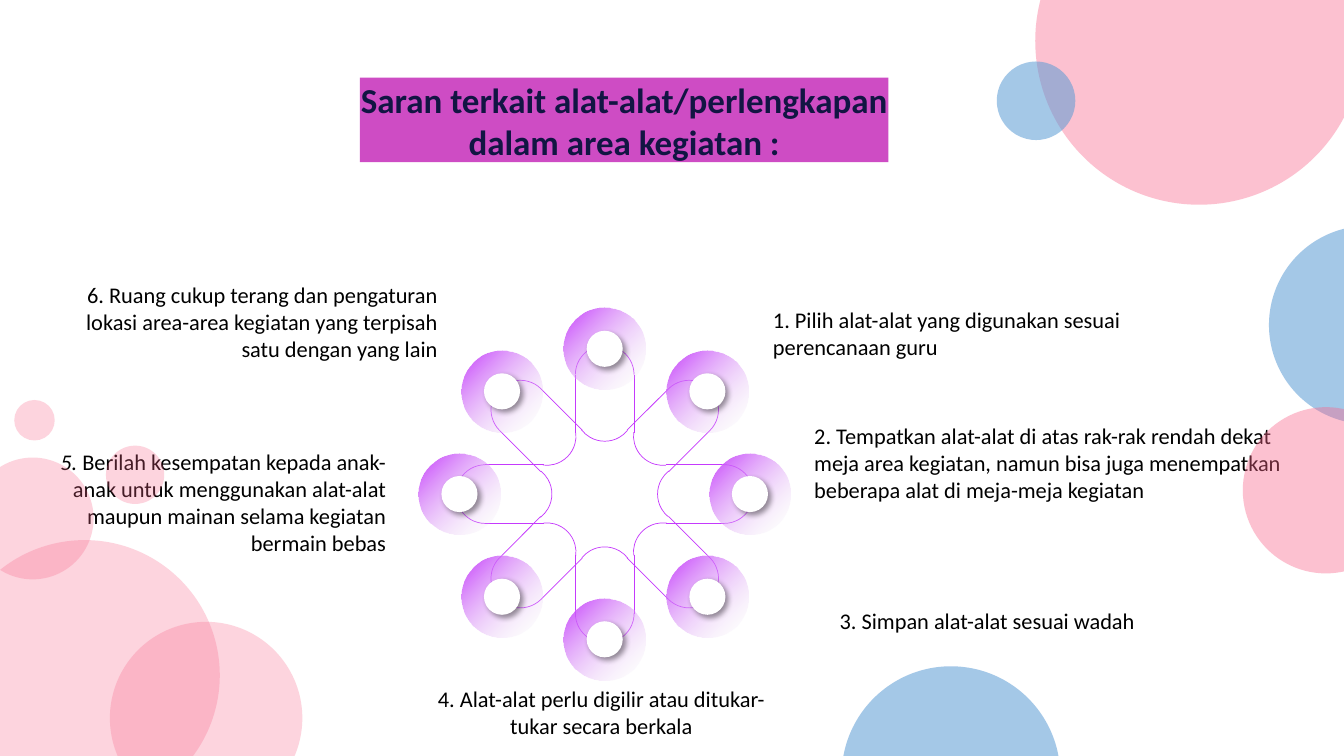
from dataclasses import dataclass
from math import cos, radians, sin

from lxml import etree
from pptx import Presentation
from pptx.dml.color import RGBColor
from pptx.enum.shapes import MSO_CONNECTOR, MSO_SHAPE
from pptx.enum.text import MSO_ANCHOR, MSO_AUTO_SIZE, PP_ALIGN
from pptx.oxml.ns import qn
from pptx.shapes.autoshape import Shape
from pptx.slide import Slide
from pptx.util import Cm, Pt

ELLIPSE, ARC, RECTANGLE = MSO_SHAPE.OVAL, MSO_SHAPE.ARC, MSO_SHAPE.RECTANGLE
STRAIGHT = MSO_CONNECTOR.STRAIGHT
LEFT, CENTER, RIGHT = PP_ALIGN.LEFT, PP_ALIGN.CENTER, PP_ALIGN.RIGHT
TOP, MIDDLE = MSO_ANCHOR.TOP, MSO_ANCHOR.MIDDLE
FIT_SHAPE = MSO_AUTO_SIZE.SHAPE_TO_FIT_TEXT

FONT = "Calibri"
PURPLE, PINK, BLUE = "C53AFD", "F9668B", "5B9BD5"
WHITE, GREY, BLACK = "FFFFFF", "F2F2F2", "000000"
TITLE_FILL, TITLE_COLOR = "CE4CC4", "121543"

# Flower geometry in centimetres
CENTER_X, CENTER_Y = 15.24, 12.45
PETALS, STEP = 8, 45
ARC_RADIUS = 0.74
PETAL_END, PETAL_START, BEND_DISTANCE = 3.01, 1.54, 2.07
PETAL_ARC, BEND_ARC = (162, 53.84), (185.41, 31.4)
NODE_DISTANCE, HALO_SIZE, BUTTON_SIZE = 3.66, 2.06, 0.91


@dataclass
class TextRun:
    text: str
    italic: bool = False
    bold: bool = False


@dataclass
class Label:
    left: float
    top: float
    width: float
    height: float
    alignment: PP_ALIGN
    runs: list[TextRun]


@dataclass
class Bubble:
    left: float
    top: float
    size: float
    color: str
    opacity: int


LABELS = [
    Label(19.48, 7.72, 9.17, 1.37, LEFT, [
        TextRun("1. Pilih alat-alat yang digunakan sesuai perencanaan guru")]),
    Label(20.52, 10.64, 12.73, 2.06, LEFT, [
        TextRun("2. Tempatkan alat-alat di atas rak-rak rendah dekat meja area kegiatan, "
                "namun bisa juga menempatkan beberapa alat di meja-meja kegiatan")]),
    Label(21.16, 15.29, 8.43, 0.69, LEFT, [
        TextRun("3. Simpan alat-alat sesuai wadah")]),
    Label(10.57, 17.27, 9.17, 1.37, CENTER, [
        TextRun("4. Alat-alat perlu digilir atau ditukar-tukar secara berkala")]),
    Label(0.81, 11.3, 8.92, 2.74, RIGHT, [
        TextRun("5. ", italic=True),
        TextRun("Berilah kesempatan kepada anak-anak untuk menggunakan alat-alat "
                "maupun mainan selama kegiatan bermain bebas")]),
    Label(2.11, 7.09, 8.92, 2.74, RIGHT, [
        TextRun("6. Ruang cukup terang dan pengaturan lokasi area-area kegiatan "
                "yang terpisah satu dengan yang lain")]),
]

BUBBLES = [
    Bubble(31.98, 5.69, 5, BLUE, 55),
    Bubble(26.09, -3.1, 8.26, PINK, 40),
    Bubble(21.21, 16.79, 5.51, BLUE, 55),
    Bubble(31.32, 10.26, 4.19, PINK, 40),
    Bubble(25.12, 1.55, 1.98, BLUE, 55),
    Bubble(-1.27, 13.61, 6.81, PINK, 28),
    Bubble(2.77, 15.67, 4.85, PINK, 28),
    Bubble(-0.71, 11.53, 3.07, PINK, 28),
    Bubble(0.36, 10.08, 1.02, PINK, 28),
    Bubble(2.67, 11.23, 1.47, PINK, 28),
]

TITLE = Label(9.07, 1.96, 13.32, 2.13, CENTER, [
    TextRun("Saran terkait alat-alat/perlengkapan dalam area kegiatan :", bold=True)])


def color(value: str) -> RGBColor:
    return RGBColor.from_string(value)


def set_opacity(color_element: etree._Element, percent: int) -> None:
    etree.SubElement(color_element, qn("a:alpha"), val=str(percent * 1000))


def polar(along: float, across: float, angle: float) -> tuple[float, float]:
    """Point in the frame of a petal that is turned by the angle."""
    turn = radians(angle)
    return (CENTER_X + along * cos(turn) - across * sin(turn),
            CENTER_Y + along * sin(turn) + across * cos(turn))


def add_circle(slide: Slide, left: float, top: float, size: float) -> Shape:
    circle = slide.shapes.add_shape(ELLIPSE, Cm(left), Cm(top), Cm(size), Cm(size))
    circle.shadow.inherit = False
    circle.line.fill.background()
    return circle


def add_arc(slide: Slide, distance: float, angle: float, rotation: float,
            span: tuple[float, float]) -> None:
    x, y = polar(distance, 0, angle)
    size = Cm(2 * ARC_RADIUS)
    arc = slide.shapes.add_shape(ARC, Cm(x - ARC_RADIUS), Cm(y - ARC_RADIUS), size, size)
    arc.adjustments[0], arc.adjustments[1] = span
    arc.rotation = rotation
    arc.shadow.inherit = False
    arc.fill.background()
    arc.line.color.rgb = color(PURPLE)
    arc.line.width = Pt(0.5)


def add_petal(slide: Slide, angle: float) -> None:
    add_arc(slide, PETAL_END, angle, angle, PETAL_ARC)
    add_arc(slide, BEND_DISTANCE, angle, (angle + 180) % 360, BEND_ARC)
    for side in (-ARC_RADIUS, ARC_RADIUS):
        start, end = polar(PETAL_START, side, angle), polar(PETAL_END, side, angle)
        edge = slide.shapes.add_connector(
            STRAIGHT, Cm(start[0]), Cm(start[1]), Cm(end[0]), Cm(end[1]))
        edge.line.color.rgb = color(PURPLE)
        edge.line.width = Pt(0.5)
        etree.SubElement(edge.element.spPr, qn("a:effectLst"))


def add_node(slide: Slide, angle: float) -> None:
    x, y = polar(NODE_DISTANCE, 0, angle)
    halo = add_circle(slide, x - HALO_SIZE / 2, y - HALO_SIZE / 2, HALO_SIZE)
    halo.fill.gradient()
    halo.fill.gradient_angle = 315
    for stop, value in zip(halo.fill.gradient_stops, (PURPLE, GREY)):
        stop.color.rgb = color(value)
    set_opacity(halo.element.xpath(".//a:gs/a:srgbClr")[-1], 0)

    button = add_circle(slide, x - BUTTON_SIZE / 2, y - BUTTON_SIZE / 2, BUTTON_SIZE)
    button.fill.solid()
    button.fill.fore_color.rgb = color(WHITE)
    effects = button.element.spPr.find(qn("a:effectLst"))
    shadow = etree.SubElement(effects, qn("a:outerShdw"), blurRad=str(Pt(4)),
                              dist=str(Pt(3)), dir="2700000", algn="tl", rotWithShape="0")
    set_opacity(etree.SubElement(shadow, qn("a:srgbClr"), val=BLACK), 40)


def write_text(shape: Shape, label: Label, size: float, text_color: str,
               anchor: MSO_ANCHOR) -> None:
    frame = shape.text_frame
    frame.word_wrap = True
    frame.auto_size = FIT_SHAPE
    frame.vertical_anchor = anchor
    frame.margin_left = frame.margin_right = frame.margin_top = frame.margin_bottom = 0
    paragraph = frame.paragraphs[0]
    paragraph.alignment = label.alignment
    for text_run in label.runs:
        run = paragraph.add_run()
        run.text = text_run.text
        run.font.name, run.font.size = FONT, Pt(size)
        run.font.bold, run.font.italic = text_run.bold, text_run.italic
        run.font.color.rgb = color(text_color)


def add_label(slide: Slide, label: Label) -> None:
    box = slide.shapes.add_textbox(
        Cm(label.left), Cm(label.top), Cm(label.width), Cm(label.height))
    write_text(box, label, 16, BLACK, TOP)


def add_bubble(slide: Slide, bubble: Bubble) -> None:
    circle = add_circle(slide, bubble.left, bubble.top, bubble.size)
    circle.fill.solid()
    circle.fill.fore_color.rgb = color(bubble.color)
    set_opacity(circle.element.spPr.find(qn("a:solidFill"))[0], bubble.opacity)


def add_title(slide: Slide, title: Label) -> None:
    banner = slide.shapes.add_shape(
        RECTANGLE, Cm(title.left), Cm(title.top), Cm(title.width), Cm(title.height))
    banner.shadow.inherit = False
    banner.fill.solid()
    banner.fill.fore_color.rgb = color(TITLE_FILL)
    banner.line.fill.background()
    write_text(banner, title, 25, TITLE_COLOR, MIDDLE)


def main() -> None:
    presentation = Presentation()
    presentation.slide_width, presentation.slide_height = Cm(33.87), Cm(19.05)
    slide = presentation.slides.add_slide(presentation.slide_layouts[6])

    # Flower outline, then the nodes on its petals
    angles = [STEP * index for index in range(PETALS)]
    for angle in angles:
        add_petal(slide, angle)
    for angle in angles:
        add_node(slide, angle)

    # Suggestions, background bubbles and title
    for label in LABELS:
        add_label(slide, label)
    for bubble in BUBBLES:
        add_bubble(slide, bubble)
    add_title(slide, TITLE)

    presentation.save("out.pptx")


if __name__ == "__main__":
    main()
